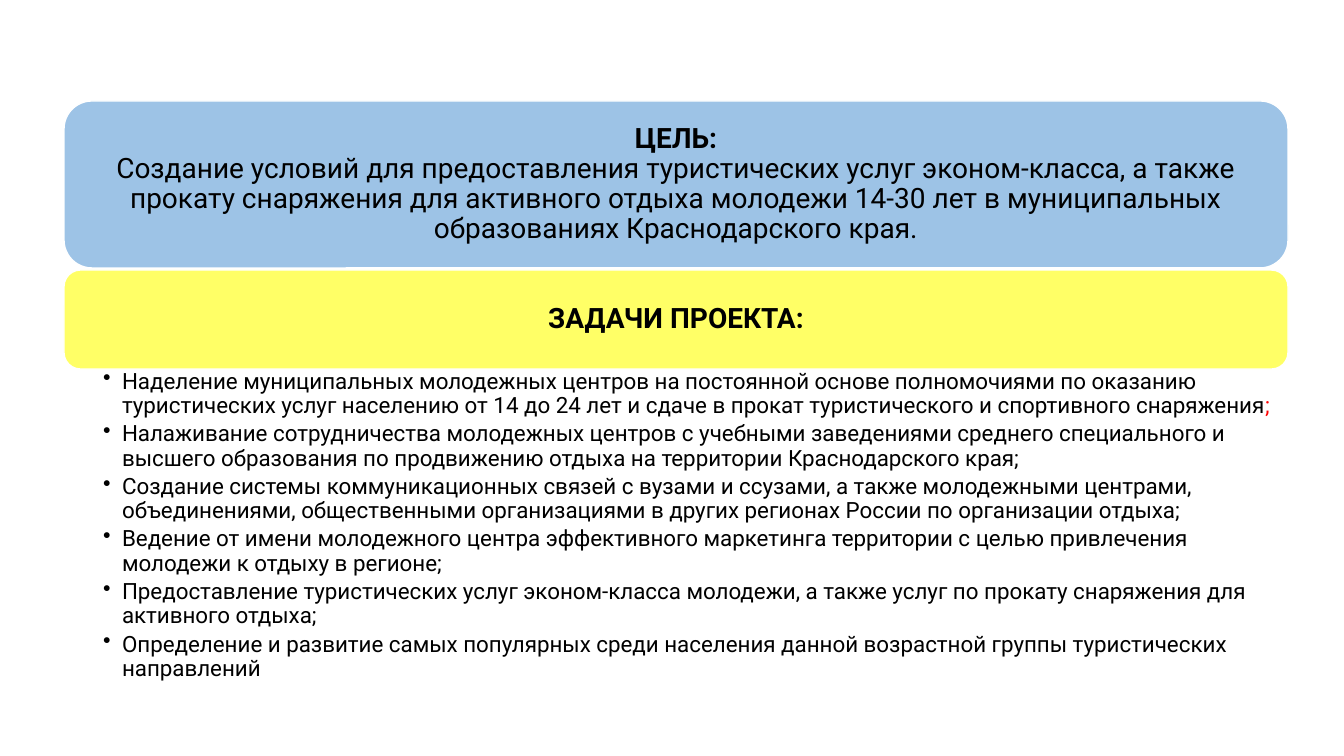
from lxml import etree
from pptx import Presentation
from pptx import util as u
from pptx.dml.color import RGBColor
from pptx.enum import shapes, text
from pptx.oxml.ns import qn

PX = 914400 / 100.8
COLORS = {"goal": "9DC3E6", "tasks": "FFFF66", "outline": "FFFFFF",
          "text": "000000", "accent": "FF0000"}
LEFT, WIDTH = 64, 1224

GOAL = ("Создание условий для предоставления туристических услуг эконом-класса, "
        "а также прокату снаряжения для активного отдыха молодежи 14-30 лет "
        "в муниципальных образованиях Краснодарского края.")
TASKS = [
    "Наделение муниципальных молодежных центров на постоянной основе полномочиями "
    "по оказанию туристических услуг населению от 14 до 24 лет и сдаче в прокат "
    "туристического и спортивного снаряжения",
    "Налаживание сотрудничества молодежных центров с учебными заведениями среднего "
    "специального и высшего образования по продвижению отдыха на территории "
    "Краснодарского края;",
    "Создание системы коммуникационных связей с вузами и ссузами, а также молодежными "
    "центрами, объединениями, общественными организациями в других регионах России "
    "по организации отдыха;",
    "Ведение от имени молодежного центра эффективного маркетинга территории с целью "
    "привлечения молодежи к отдыху в регионе;",
    "Предоставление туристических услуг эконом-класса молодежи, а также услуг "
    "по прокату снаряжения для активного отдыха;",
    "Определение и развитие самых популярных среди населения данной возрастной группы "
    "туристических направлений",
]


def px(*lengths):
    return [u.Emu(round(length * PX)) for length in lengths]


def write(paragraph, words, size=20, bold=False, color="text"):
    run = paragraph.add_run()
    run.text = words
    run.font.name = "Roboto"
    run.font.size = u.Pt(size)
    run.font.bold = bold
    run.font.color.rgb = RGBColor.from_string(COLORS[color])


deck = Presentation()
deck.slide_width, deck.slide_height = px(1344, 756)
slide = deck.slides.add_slide(deck.slide_layouts[6])

# Goal and tasks banners
banners = [
    ("goal", 101, 167, [("ЦЕЛЬ:", True), (GOAL, False)]),
    ("tasks", 270, 99, [("ЗАДАЧИ ПРОЕКТА:", True)]),
]
for color, top, height, lines in banners:
    banner = slide.shapes.add_shape(shapes.MSO_SHAPE.ROUNDED_RECTANGLE,
                                    *px(LEFT, top, WIDTH, height))
    banner.shadow.inherit = False
    banner.fill.solid()
    banner.fill.fore_color.rgb = RGBColor.from_string(COLORS[color])
    banner.line.color.rgb = RGBColor.from_string(COLORS["outline"])
    banner.line.width = u.Pt(1)
    frame = banner.text_frame
    frame.word_wrap = True
    frame.vertical_anchor = text.MSO_ANCHOR.MIDDLE
    frame.margin_left, frame.margin_top, frame.margin_right, frame.margin_bottom = px(8, 8, 8, 8)
    for i, (words, bold) in enumerate(lines):
        paragraph = frame.add_paragraph() if i else frame.paragraphs[0]
        paragraph.alignment = text.PP_ALIGN.CENTER
        paragraph.line_spacing = 0.9
        write(paragraph, words, bold=bold)

# Bulleted list of tasks
task_list = slide.shapes.add_textbox(*px(LEFT, 368, WIDTH, 371)).text_frame
task_list.word_wrap = True
(task_list.margin_left, task_list.margin_top,
 task_list.margin_right, task_list.margin_bottom) = px(39, 2, 12, 2)
indent = px(19)[0]
for i, task in enumerate(TASKS):
    paragraph = task_list.add_paragraph() if i else task_list.paragraphs[0]
    paragraph.level = 1
    paragraph.line_spacing = 0.9
    paragraph.space_after = u.Pt(3)
    properties = paragraph._p.get_or_add_pPr()
    properties.set("marL", str(indent))
    properties.set("indent", str(-indent))
    etree.SubElement(properties, qn("a:buChar")).set("char", "•")
    write(paragraph, task, size=16)
    if i == 0:
        write(paragraph, ";", size=16, color="accent")

deck.save("out.pptx")
